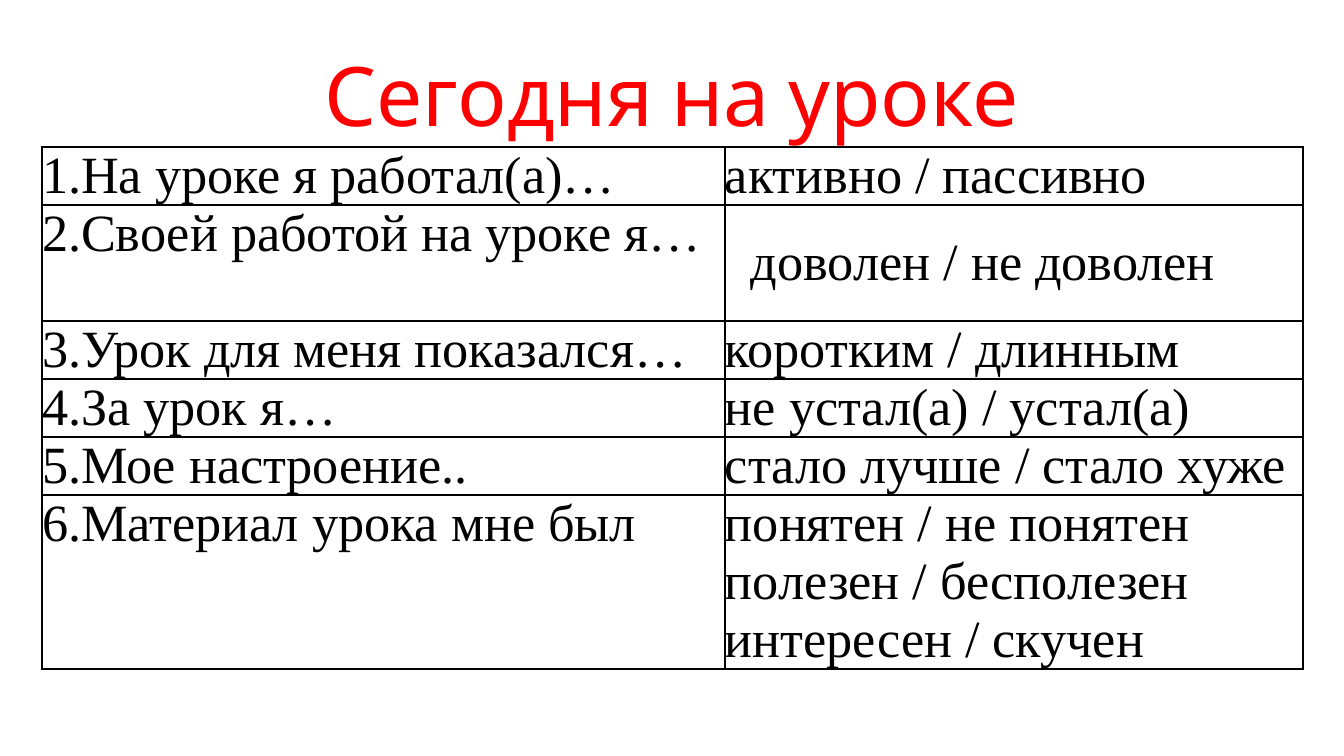
from lxml import etree
from pptx import Presentation
from pptx.dml.color import RGBColor
from pptx.enum.text import MSO_ANCHOR, PP_ALIGN
from pptx.oxml.ns import qn
from pptx.util import Emu, Pt

CENTER = PP_ALIGN.CENTER
TOP = MSO_ANCHOR.TOP
MIDDLE = MSO_ANCHOR.MIDDLE
TITLE_ONLY = 5
PX_PER_INCH = 134.4
BLACK = "000000"
RED = "FF0000"
COLUMN_WIDTHS = (683, 578)
LINE_HEIGHT = 58
ANSWER_INDENT = 26
TITLE_FONT = {"name": "Cabin", "size": Pt(44), "bold": False}
TABLE_FONT = {"name": "Times New Roman", "size": Pt(28), "bold": False}
REFLECTION = [
    ("1.На уроке я работал(а)…", "активно / пассивно", 1, 0),
    ("2.Своей работой на уроке я…", "доволен / не доволен", 2, ANSWER_INDENT),
    ("3.Урок для меня показался…", "коротким / длинным", 1, 0),
    ("4.За урок я…", "не устал(а) / устал(а)", 1, 0),
    ("5.Мое настроение..", "стало лучше / стало хуже", 1, 0),
    ("6.Материал урока мне был",
     "понятен / не понятен\vполезен / бесполезен\vинтересен / скучен", 3, 0),
]


def px(length):
    """Turn whole pixels into EMU."""
    return Emu(round(length * 914400 / PX_PER_INCH))


def color(code):
    """Turn a hex string into a colour."""
    return RGBColor.from_string(code)


def set_values(target, values):
    """Set each attribute named in a dict."""
    for name, value in values.items():
        setattr(target, name, value)


def style_text(frame, font, code):
    """Format every span in a text frame."""
    for para in frame.paragraphs:
        for span in para.runs:
            set_values(span.font, font)
            span.font.color.rgb = color(code)


def add_title(page, text):
    """Fill and place the title placeholder."""
    title = page.shapes.title
    set_values(title, {"left": px(67), "top": px(31),
                       "width": px(1210), "height": px(126)})
    frame = title.text_frame
    frame.text = text
    frame.vertical_anchor = MIDDLE
    frame.paragraphs[0].alignment = CENTER
    style_text(frame, TITLE_FONT, RED)


def add_borders(cell, code):
    """Draw a one-point line on each side of a cell."""
    properties = cell._tc.get_or_add_tcPr()
    for side in ("lnL", "lnR", "lnT", "lnB"):
        line = etree.SubElement(properties, qn(f"a:{side}"), w=str(Pt(1)))
        fill = etree.SubElement(line, qn("a:solidFill"))
        etree.SubElement(fill, qn("a:srgbClr"), val=code)


def fill_cell(cell, text, anchor, indent):
    """Write and format one table cell."""
    cell.text = text
    set_values(cell, {"margin_left": px(indent), "margin_right": 0,
                      "margin_top": 0, "margin_bottom": 0,
                      "vertical_anchor": anchor})
    style_text(cell.text_frame, TABLE_FONT, BLACK)
    add_borders(cell, BLACK)
    cell.fill.background()


def add_reflection_table(page):
    """Add the table of prompts and answers."""
    height = LINE_HEIGHT * sum(lines for _, _, lines, _ in REFLECTION)
    table = page.shapes.add_table(len(REFLECTION), len(COLUMN_WIDTHS), px(42), px(147),
                                  px(sum(COLUMN_WIDTHS)), px(height)).table
    set_values(table, {"first_row": False, "horz_banding": False})
    for column, width in zip(table.columns, COLUMN_WIDTHS):
        column.width = px(width)
    for row, (prompt, answer, lines, indent) in zip(table.rows, REFLECTION):
        row.height = px(lines * LINE_HEIGHT)
        fill_cell(row.cells[0], prompt, TOP, 0)
        fill_cell(row.cells[1], answer, MIDDLE, indent)


def main():
    """Build and save the deck."""
    deck = Presentation()
    set_values(deck, {"slide_width": px(1344), "slide_height": px(756)})
    page = deck.slides.add_slide(deck.slide_layouts[TITLE_ONLY])
    add_title(page, "Сегодня на уроке")
    add_reflection_table(page)
    deck.save("out.pptx")


if __name__ == "__main__":
    main()
